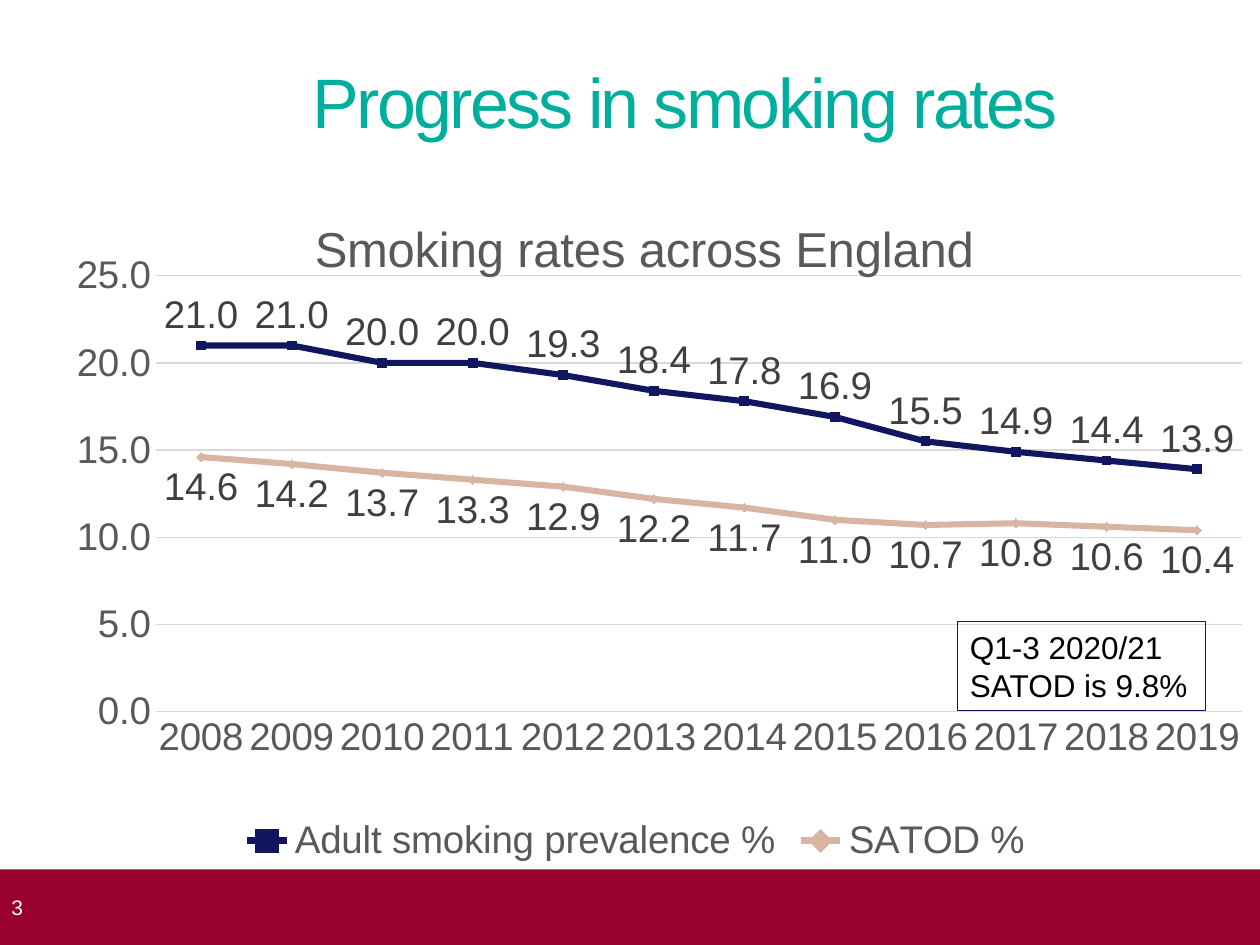
from lxml import etree
from pptx import Presentation
from pptx.chart.data import CategoryChartData
from pptx.dml.color import RGBColor
from pptx.enum.chart import (XL_CHART_TYPE, XL_LABEL_POSITION, XL_LEGEND_POSITION,
                             XL_MARKER_STYLE, XL_TICK_MARK)
from pptx.enum.shapes import MSO_SHAPE
from pptx.enum.text import MSO_ANCHOR, MSO_AUTO_SIZE, PP_ALIGN
from pptx.oxml.ns import qn
from pptx.util import Inches, Pt

LINE = XL_CHART_TYPE.LINE_MARKERS
ABOVE, BELOW = XL_LABEL_POSITION.ABOVE, XL_LABEL_POSITION.BELOW
SQUARE, DIAMOND = XL_MARKER_STYLE.SQUARE, XL_MARKER_STYLE.DIAMOND
NONE = XL_TICK_MARK.NONE
RECT = MSO_SHAPE.RECTANGLE
MIDDLE = MSO_ANCHOR.MIDDLE
LEFT = PP_ALIGN.LEFT

WIDE, HIGH = 10, 7.5
FOOT = 0.6
FACE = "Arial"
HUES = {"title": "00AE9E", "foot": "98002E", "white": "FFFFFF", "black": "000000",
        "navy": "11175E", "sand": "D8B5A3", "grey": "595959", "label": "404040",
        "grid": "D9D9D9"}

TITLE = "Progress in smoking rates"
HEAD = "Smoking rates across England"
NOTE = "Q1-3 2020/21 SATOD is 9.8%"
PAGE = "3"
YEARS = [str(year) for year in range(2008, 2020)]
RATES = [
    ("Adult smoking prevalence %", "navy", SQUARE, ABOVE,
     (21, 21, 20, 20, 19.3, 18.4, 17.8, 16.9, 15.5, 14.9, 14.4, 13.9)),
    ("SATOD %", "sand", DIAMOND, BELOW,
     (14.6, 14.2, 13.7, 13.3, 12.9, 12.2, 11.7, 11, 10.7, 10.8, 10.6, 10.4)),
]


def hue(name):
    return RGBColor.from_string(HUES[name])


def style(font, size, name):
    font.size, font.name, font.bold = Pt(size), FACE, False
    font.color.rgb = hue(name)


def stroke(line, name, width):
    line.color.rgb = hue(name)
    line.width = Pt(width)


def paint(fill, name):
    fill.solid()
    fill.fore_color.rgb = hue(name)


def write(shape, text, size, name):
    """Set left-aligned text in a shape and return its run."""
    frame = shape.text_frame
    frame.text = text
    frame.word_wrap = True
    frame.vertical_anchor = MIDDLE
    part = frame.paragraphs[0]
    part.alignment = LEFT
    style(part.runs[0].font, size, name)
    return part.runs[0]


def place(node, index, **parts):
    """Give a chart part a manual layout, in shares of the chart's size."""
    for old in node.findall(qn("c:layout")):
        node.remove(old)
    layout = etree.Element(qn("c:layout"))
    manual = etree.SubElement(layout, qn("c:manualLayout"))
    for tag, val in parts.items():
        etree.SubElement(manual, qn("c:" + tag)).set("val", str(val))
    node.insert(index, layout)


def add_title(slide):
    title = slide.shapes.title
    title.left, title.top = Inches(2.48), Inches(0.44)
    title.width, title.height = Inches(6.85), Inches(0.71)
    frame = title.text_frame
    frame.margin_left = frame.margin_right = frame.margin_top = frame.margin_bottom = 0
    frame.auto_size = MSO_AUTO_SIZE.NONE
    run = write(title, TITLE, 40, "title")
    run.font._element.set("spc", "-150")


def add_box(slide, *area):
    box = slide.shapes.add_shape(RECT, *map(Inches, area))
    box.shadow.inherit = False
    return box


def add_chart(slide):
    data = CategoryChartData(number_format="0.0")
    data.categories = YEARS
    for name, *_, vals in RATES:
        data.add_series(name, vals)
    area = map(Inches, (0.2, 1.39, 9.69, HIGH - FOOT - 1.39))
    chart = slide.shapes.add_chart(LINE, *area, data).chart
    style(chart.font, 10, "black")

    chart.has_title = True
    head = chart.chart_title
    head.text_frame.text = HEAD
    style(head.text_frame.paragraphs[0].runs[0].font, 28, "grey")
    place(head._element, 1, xMode="edge", yMode="edge", x=0.23, y=0.05)
    place(chart._chartSpace.chart.plotArea, 0, layoutTarget="inner",
          xMode="edge", yMode="edge", x=0.107, y=0.145, w=0.89, h=0.628)

    chart.has_legend = True
    chart.legend.position = XL_LEGEND_POSITION.BOTTOM
    chart.legend.include_in_layout = False
    style(chart.legend.font, 22, "grey")

    years, scale = chart.category_axis, chart.value_axis
    for axis in (years, scale):
        axis.major_tick_mark = axis.minor_tick_mark = NONE
        style(axis.tick_labels.font, 22, "grey")
    stroke(years.format.line, "grid", 0.75)
    scale.format.line.fill.background()
    stroke(scale.major_gridlines.format.line, "grid", 0.75)
    scale.minimum_scale, scale.maximum_scale, scale.major_unit = 0, 25, 5
    scale.tick_labels.number_format = "0.0"
    scale.tick_labels.number_format_is_linked = False

    plot = chart.plots[0]
    plot.vary_by_categories = False
    for series, (_, tone, mark, side, _) in zip(plot.series, RATES):
        series.smooth = False
        stroke(series.format.line, tone, 3.5)
        series.marker.style, series.marker.size = mark, 5
        paint(series.marker.format.fill, tone)
        stroke(series.marker.format.line, tone, 0.75)
        labels = series.data_labels
        labels.show_value = True
        labels.position = side
        labels.number_format = "0.0"
        labels.number_format_is_linked = False
        style(labels.font, 22, "label")


def main():
    deck = Presentation()
    deck.slide_width, deck.slide_height = Inches(WIDE), Inches(HIGH)
    slide = deck.slides.add_slide(deck.slide_layouts[5])
    add_title(slide)

    foot = add_box(slide, 0, HIGH - FOOT, WIDE, FOOT)
    paint(foot.fill, "foot")
    foot.line.fill.background()
    foot.text_frame.margin_left = Inches(0.09)
    write(foot, PAGE, 12, "white")

    add_chart(slide)

    note = add_box(slide, 7.6, 4.93, 1.97, 0.71)
    note.fill.background()
    stroke(note.line, "navy", 0.75)
    write(note, NOTE, 18, "black")
    deck.save("out.pptx")


if __name__ == "__main__":
    main()
